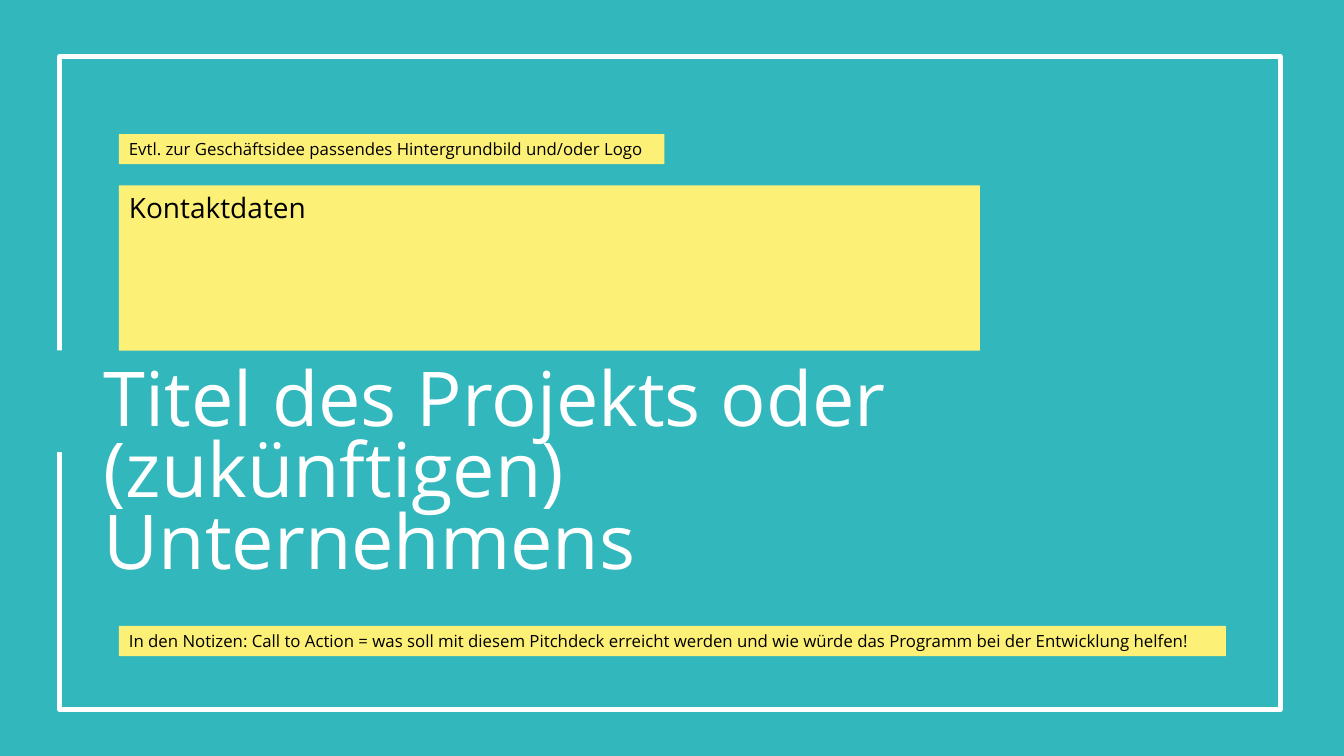
"""Build the title slide of a pitch deck."""
from pptx import Presentation
from pptx import util as u
from pptx.dml.color import RGBColor
from pptx.enum import shapes, text

TEAL = RGBColor(0x31, 0xB7, 0xBC)
YELLOW = RGBColor(0xFD, 0xF0, 0x77)
WHITE = RGBColor(0xFF, 0xFF, 0xFF)
BLACK = RGBColor(0x00, 0x00, 0x00)
FONT = "Open Sans"
WIDTH, HEIGHT = 13.33, 7.5
NOTE_LEFT = 1.18
NOTE_HEIGHT = 0.3


def add_rectangle(page, box, fill=None, line=None):
    """Add a flat rectangle with an optional fill and outline."""
    shape = page.shapes.add_shape(
        shapes.MSO_SHAPE.RECTANGLE, *[u.Inches(length) for length in box])
    shape.shadow.inherit = False
    if fill is None:
        shape.fill.background()
    else:
        shape.fill.solid()
        shape.fill.fore_color.rgb = fill
    if line is None:
        shape.line.fill.background()
    else:
        shape.line.color.rgb = line
        shape.line.width = u.Pt(3)
    return shape


def write(frame, words, size, color):
    """Write one left-aligned paragraph and return it."""
    frame.word_wrap = True
    para = frame.paragraphs[0]
    para.alignment = text.PP_ALIGN.LEFT
    span = para.add_run()
    span.text = words
    span.font.name = FONT
    span.font.size = u.Pt(size)
    span.font.color.rgb = color
    return para


def add_frame(page, box):
    """Outline the box and open a gap in its left side."""
    left, top, width, height = box
    add_rectangle(page, box, line=WHITE)
    add_rectangle(page, (0, top + 0.45 * height, left + 0.4, 1.01), fill=TEAL)


def add_note(page, box, words, size=12, anchor=text.MSO_ANCHOR.MIDDLE):
    """Add a yellow note filling the box."""
    frame = add_rectangle(page, box, fill=YELLOW).text_frame
    frame.vertical_anchor = anchor
    if anchor == text.MSO_ANCHOR.MIDDLE:
        frame.margin_top = frame.margin_bottom = 0
    write(frame, words, size, BLACK)


def add_title(page, box, words):
    """Add the large white title at the top of the box."""
    frame = page.shapes.add_textbox(
        *[u.Inches(length) for length in box]).text_frame
    frame.vertical_anchor = text.MSO_ANCHOR.TOP
    frame.margin_top = u.Inches(0.1)
    frame.margin_right = u.Inches(0.3)
    write(frame, words, 54, WHITE).line_spacing = 0.79


def build_title_slide(deck):
    """Add the title slide with its frame, notes and title."""
    page = deck.slides.add_slide(deck.slide_layouts[6])
    page.background.fill.solid()
    page.background.fill.fore_color.rgb = TEAL
    add_frame(page, (0.59, 0.56, 12.11, 6.48))
    add_note(page, (NOTE_LEFT, 1.84, 8.54, 1.64), "Kontaktdaten",
             20, text.MSO_ANCHOR.TOP)
    add_note(page, (NOTE_LEFT, 1.33, 5.41, NOTE_HEIGHT),
             "Evtl. zur Geschäftsidee passendes Hintergrundbild und/oder Logo")
    add_title(page, (0.93, 3.56, 10.23, 1.85),
              "Titel des Projekts oder (zukünftigen) Unternehmens")
    add_note(page, (NOTE_LEFT, 6.21, 10.98, NOTE_HEIGHT),
             "In den Notizen: Call to Action = was soll mit diesem Pitchdeck "
             "erreicht werden und wie würde das Programm bei der Entwicklung "
             "helfen!")


def main():
    """Create and save the deck."""
    deck = Presentation()
    deck.slide_width = u.Inches(WIDTH)
    deck.slide_height = u.Inches(HEIGHT)
    build_title_slide(deck)
    deck.save("out.pptx")


if __name__ == "__main__":
    main()
